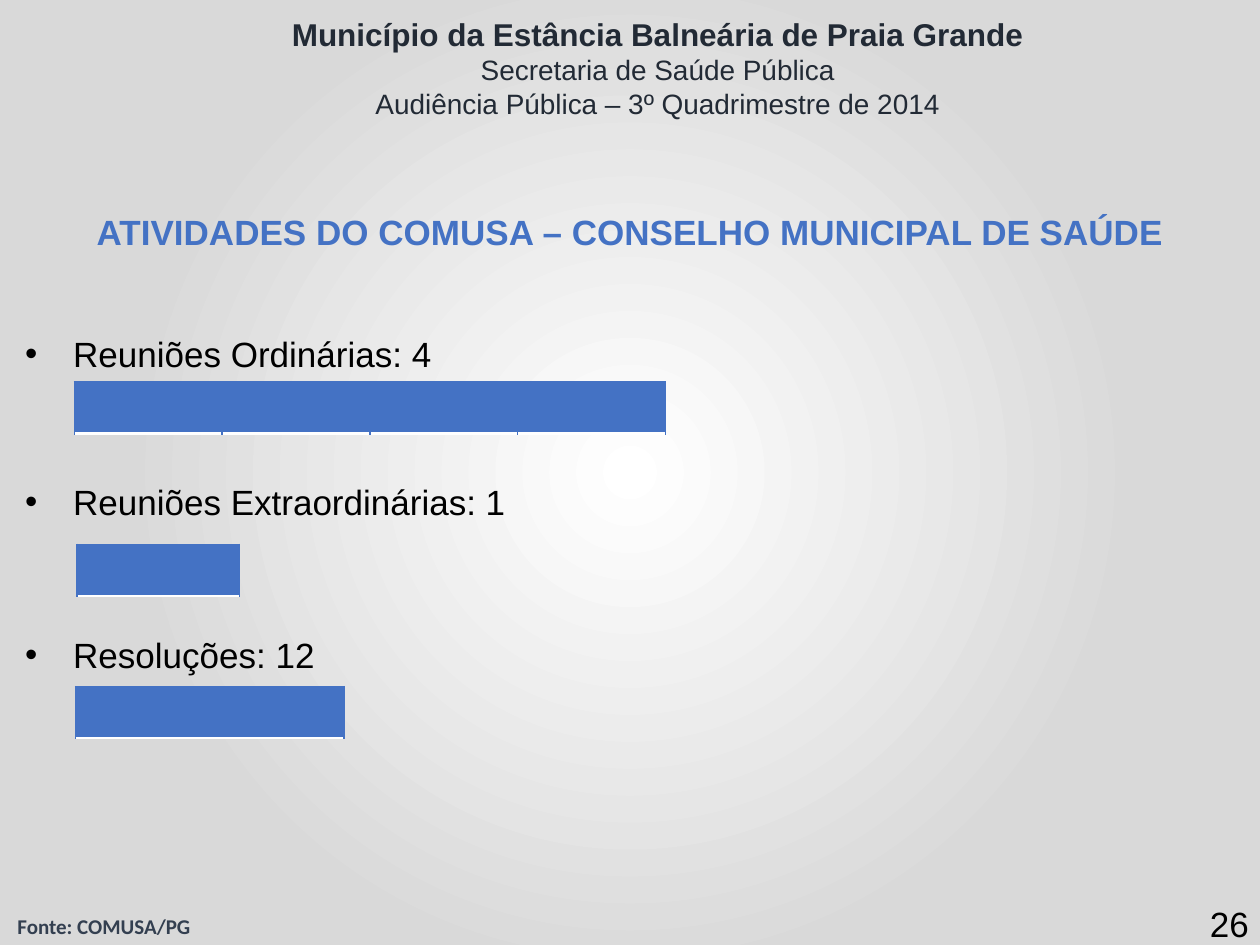
from dataclasses import dataclass

from lxml.etree import SubElement
from pptx import Presentation
from pptx.dml.color import RGBColor
from pptx.enum.text import MSO_ANCHOR as Anchor, MSO_AUTO_SIZE as Fit, PP_ALIGN as Align
from pptx.oxml import parse_xml
from pptx.oxml.ns import nsdecls, qn
from pptx.util import Inches, Pt

BLUE = RGBColor(0x44, 0x72, 0xC4)
NAVY = RGBColor(0x22, 0x2A, 0x35)
SLATE = RGBColor(0x33, 0x3F, 0x50)
BLACK = RGBColor(0, 0, 0)
WHITE = RGBColor(0xFF, 0xFF, 0xFF)
GREY = RGBColor(0xD9, 0xD9, 0xD9)
NO_STYLE = "{2D5ABB26-0587-4C30-8999-92F81FD0307C}"
BAR_H = 0.41


@dataclass
class Box:
    left: float
    top: float
    width: float
    height: float

    def emu(self) -> list:
        return [Inches(v) for v in (self.left, self.top, self.width, self.height)]


@dataclass
class Face:
    size: int
    color: RGBColor
    bold: bool = False
    name: str = "Arial"


@dataclass
class Item:
    slot: int  # index of the layout's placeholder
    text: str
    box: Box
    bar: Box
    cols: int = 1


HEAD = [
    ("Município da Estância Balneária de Praia Grande", Face(18, NAVY, True)),
    ("Secretaria de Saúde Pública", Face(16, NAVY)),
    ("Audiência Pública – 3º Quadrimestre de 2014", Face(16, NAVY)),
]
ITEMS = [
    Item(1, "Reuniões Ordinárias: 4", Box(0.1, 2.49, 5.68, 1.33),
         Box(0.59, 3.03, 4.69, BAR_H), 4),
    Item(2, "Reuniões Extraordinárias: 1", Box(0.1, 3.66, 5.68, 1.33),
         Box(0.61, 4.32, 1.29, BAR_H)),
    Item(3, "Resoluções: 12", Box(0.1, 4.88, 5.68, 0.63),
         Box(0.6, 5.45, 2.13, BAR_H)),
]


def paint_back(slide) -> None:
    """Fill the background with a circular gradient from the centre."""
    stops = "".join(
        f'<a:gs pos="{pos * 1000}"><a:srgbClr val="{color}"/></a:gs>'
        for pos, color in ((0, WHITE), (65, GREY), (97, GREY)))
    slide.element.cSld.insert(0, parse_xml(
        f'<p:bg {nsdecls("p", "a")}><p:bgPr><a:gradFill rotWithShape="1">'
        f'<a:gsLst>{stops}</a:gsLst><a:path path="circle">'
        '<a:fillToRect l="50000" t="50000" r="50000" b="50000"/></a:path>'
        '</a:gradFill><a:effectLst/></p:bgPr></p:bg>'))


def place(shape, box: Box, anchor=Anchor.TOP, wrap: bool = True):
    """Move a shape and return its text frame, set up for fixed text."""
    shape.left, shape.top, shape.width, shape.height = box.emu()
    frame = shape.text_frame
    frame.word_wrap = wrap
    frame.auto_size = Fit.NONE
    frame.vertical_anchor = anchor
    return frame


def add_run(para, text: str, face: Face, align=Align.LEFT) -> None:
    para.alignment = align
    run = para.add_run()
    run.text = text
    font = run.font
    font.name, font.size, font.bold = face.name, Pt(face.size), face.bold
    font.color.rgb = face.color


def add_box(slide, box: Box, **opts):
    return place(slide.shapes.add_textbox(*box.emu()), box, **opts)


def add_item(slide, item: Item) -> None:
    frame = place(slide.placeholders[item.slot], item.box)
    para = frame.paragraphs[0]
    props = para._p.get_or_add_pPr()
    props.set("marL", str(Inches(0.38)))
    props.set("indent", str(-Inches(0.38)))
    SubElement(props, qn("a:buFont"), typeface="Arial")
    SubElement(props, qn("a:buChar"), char="•")
    para.line_spacing = 1.3
    para.space_before = Pt(0)
    add_run(para, item.text, Face(20, BLACK))


def add_edge(cell, side: str, color: RGBColor, width: float) -> None:
    line = SubElement(cell._tc.get_or_add_tcPr(), qn(f"a:ln{side}"), w=str(Pt(width)))
    fill = SubElement(line, qn("a:solidFill"))
    SubElement(fill, qn("a:srgbClr"), val=str(color))


def add_bar(slide, box: Box, cols: int) -> None:
    table = slide.shapes.add_table(1, cols, *box.emu()).table
    table.first_row = table.horz_banding = False
    table._tbl.tblPr.find(qn("a:tableStyleId")).text = NO_STYLE
    for col in table.columns:
        col.width = Inches(box.width / cols)
    for cell in table.rows[0].cells:
        for side in "LRT":
            add_edge(cell, side, BLUE, 1)
        add_edge(cell, "B", WHITE, 1.5)
        cell.fill.solid()
        cell.fill.fore_color.rgb = BLUE


def main() -> None:
    deck = Presentation()
    deck.slide_width, deck.slide_height = Inches(10), Inches(7.5)
    slide = deck.slides.add_slide(deck.slide_layouts.get_by_name("Comparison"))
    paint_back(slide)

    head = add_box(slide, Box(1.13, 0.07, 8.18, 0.94))
    for i, (text, face) in enumerate(HEAD):
        para = head.add_paragraph() if i else head.paragraphs[0]
        add_run(para, text, face, Align.CENTER)

    title = place(slide.shapes.title, Box(0, 1.62, 10, 0.44))
    add_run(title.paragraphs[0], "ATIVIDADES DO COMUSA – CONSELHO MUNICIPAL DE SAÚDE",
            Face(20, BLUE, True), Align.CENTER)

    for item in ITEMS:
        add_item(slide, item)
        add_bar(slide, item.bar, item.cols)

    note = add_box(slide, Box(0.04, 7.2, 1.59, 0.3), wrap=False)
    add_run(note.paragraphs[0], "Fonte: COMUSA/PG", Face(12, SLATE, True, "Calibri"))
    page = add_box(slide, Box(7.68, 7.13, 2.33, 0.4), anchor=Anchor.MIDDLE)
    add_run(page.paragraphs[0], "26", Face(20, BLACK), Align.RIGHT)

    for spare in list(slide.placeholders):
        if not spare.text_frame.text:
            spare.element.getparent().remove(spare.element)
    deck.save("out.pptx")


if __name__ == "__main__":
    main()
